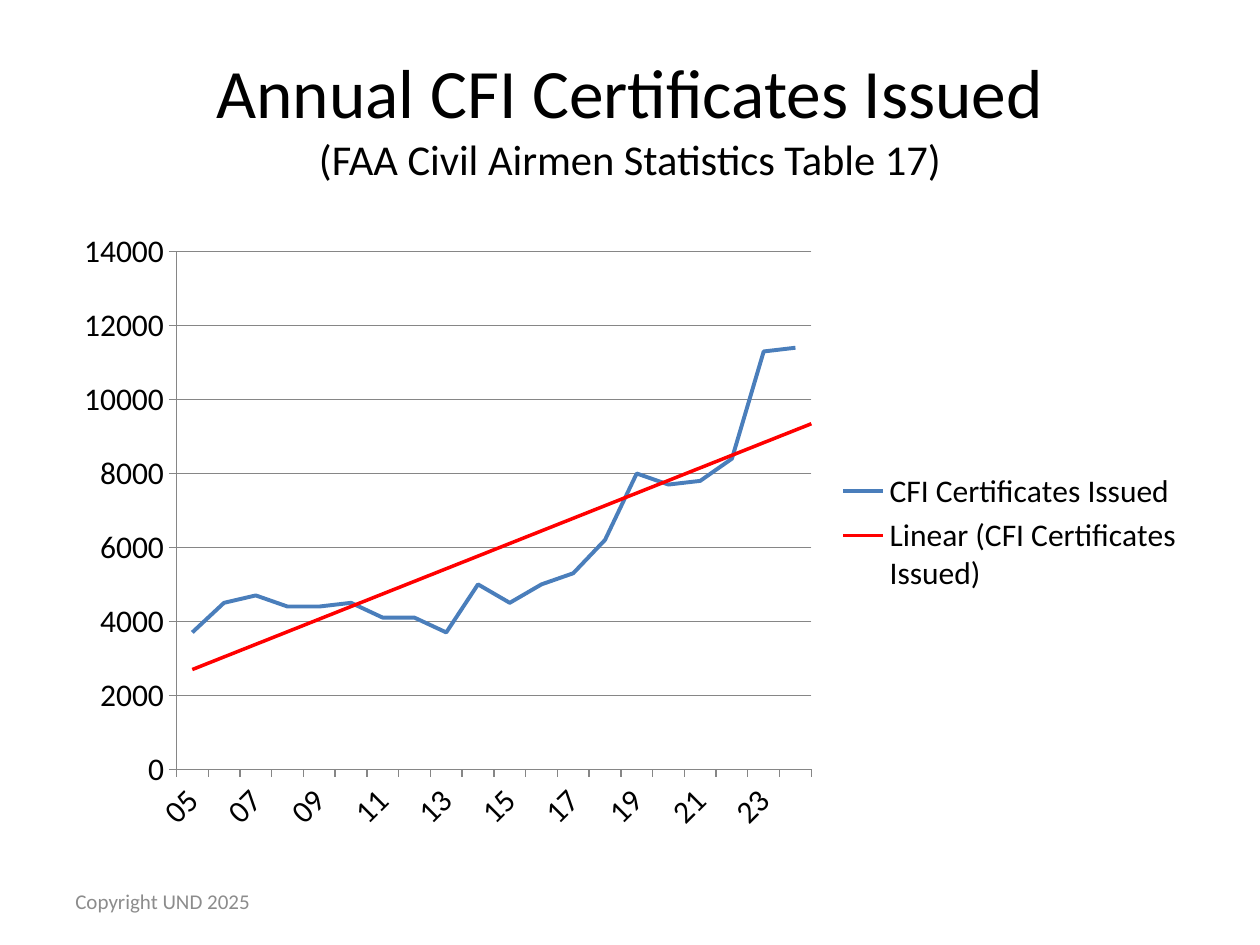
from lxml.etree import fromstring
from pptx import Presentation
from pptx.chart.data import CategoryChartData
from pptx.dml.color import RGBColor
from pptx.enum.chart import XL_CHART_TYPE, XL_LEGEND_POSITION, XL_MARKER_STYLE, XL_TICK_MARK
from pptx.enum.text import MSO_ANCHOR, PP_ALIGN
from pptx.oxml.ns import nsdecls, qn
from pptx.util import Inches, Pt

BLACK = RGBColor(0x00, 0x00, 0x00)
GRAY = RGBColor(0x8C, 0x8C, 0x8C)
AXIS_GRAY = RGBColor(0x86, 0x86, 0x86)
BLUE = RGBColor(0x4A, 0x7E, 0xBB)
RED = RGBColor(0xFF, 0x00, 0x00)

YEARS = [f"{year:02d}" for year in range(5, 25)]
CERTIFICATES = [3700, 4500, 4700, 4400, 4400, 4500, 4100, 4100, 3700, 5000,
                4500, 5000, 5300, 6200, 8000, 7700, 7800, 8400, 11300, 11400]

TREND = f"""<c:trendline {nsdecls('c', 'a')}>
  <c:spPr><a:ln w="{Pt(2)}"><a:solidFill><a:srgbClr val="{RED}"/></a:solidFill></a:ln></c:spPr>
  <c:trendlineType val="linear"/><c:forward val="0.5"/>
  <c:dispRSqr val="0"/><c:dispEq val="0"/>
</c:trendline>"""
PLOT_LAYOUT = f"""<c:layout {nsdecls('c')}><c:manualLayout>
  <c:layoutTarget val="inner"/><c:xMode val="edge"/><c:yMode val="edge"/>
  <c:x val="0.1"/><c:y val="0.05"/><c:w val="0.56"/><c:h val="0.83"/>
</c:manualLayout></c:layout>"""
LABEL_SKIP = f'<c:tickLblSkip {nsdecls("c")} val="2"/>'


class SlideBuilder:
    """Holds the style and the current slide and adds each kind of element."""

    font = "Calibri"

    def __init__(self, slide):
        self.slide = slide

    def style_run(self, run, size, color):
        run.font.name = self.font
        run.font.size = Pt(size)
        run.font.color.rgb = color

    def title(self, heading, source, left, top, width, height):
        title = self.slide.shapes.title
        title.left, title.top = Inches(left), Inches(top)
        title.width, title.height = Inches(width), Inches(height)
        frame = title.text_frame
        frame.text = f"{heading}\v{source}"
        frame.vertical_anchor = MSO_ANCHOR.MIDDLE
        frame.paragraphs[0].alignment = PP_ALIGN.CENTER
        for run, size in zip(frame.paragraphs[0].runs, (39.6, 24.3)):
            self.style_run(run, size, BLACK)

    def footer(self, wording, left, top, width, height):
        frame = self.slide.shapes.add_textbox(
            Inches(left), Inches(top), Inches(width), Inches(height)).text_frame
        frame.word_wrap = True
        frame.vertical_anchor = MSO_ANCHOR.MIDDLE
        frame.text = wording
        self.style_run(frame.paragraphs[0].runs[0], 12, GRAY)

    def trend_chart(self, name, categories, values, left, top, width, height):
        data = CategoryChartData()
        data.categories = categories
        data.add_series(name, values)
        chart = self.slide.shapes.add_chart(
            XL_CHART_TYPE.LINE, Inches(left), Inches(top),
            Inches(width), Inches(height), data).chart
        chart.has_title = False
        chart.font.name = self.font
        chart.font.size = Pt(18)
        chart.font.color.rgb = BLACK
        chart.has_legend = True
        chart.legend.position = XL_LEGEND_POSITION.RIGHT
        chart.legend.include_in_layout = False
        self.axes(chart)

        plot = chart.plots[0]
        plot.vary_by_categories = False
        series = plot.series[0]
        series.smooth = False
        series.marker.style = XL_MARKER_STYLE.NONE
        series.format.line.color.rgb = BLUE
        series.format.line.width = Pt(2.25)
        series._element.find(qn("c:cat")).addprevious(fromstring(TREND))

        plot_area = chart._chartSpace.chart.plotArea
        for layout in plot_area.findall(qn("c:layout")):
            plot_area.remove(layout)
        plot_area.insert(0, fromstring(PLOT_LAYOUT))

    def axes(self, chart):
        years, counts = chart.category_axis, chart.value_axis
        for axis in (years, counts):
            axis.major_tick_mark = XL_TICK_MARK.OUTSIDE
            axis.minor_tick_mark = XL_TICK_MARK.NONE
            axis.format.line.color.rgb = AXIS_GRAY
            axis.format.line.width = Pt(0.75)
            axis.tick_labels.font.size = Pt(18)
        counts.minimum_scale, counts.maximum_scale = 0, 14000
        counts.major_unit = 2000
        counts.has_major_gridlines = True
        counts.major_gridlines.format.line.color.rgb = AXIS_GRAY
        counts.major_gridlines.format.line.width = Pt(0.75)
        years.has_major_gridlines = False
        years._element.find(qn("c:txPr")).find(qn("a:bodyPr")).set("rot", "-2700000")
        years._element.find(qn("c:noMultiLvlLbl")).addprevious(fromstring(LABEL_SKIP))


def main():
    presentation = Presentation()
    presentation.slide_width, presentation.slide_height = Inches(10), Inches(7.5)
    builder = SlideBuilder(presentation.slides.add_slide(presentation.slide_layouts[5]))
    builder.title("Annual CFI Certificates Issued",
                  "(FAA Civil Airmen Statistics Table 17)", 0.5, 0.3, 9, 1.25)
    builder.footer("Copyright UND 2025", 0.5, 6.95, 2.33, 0.4)
    builder.trend_chart("CFI Certificates Issued", YEARS, CERTIFICATES, 0.5, 1.75, 9, 4.95)
    presentation.save("out.pptx")


if __name__ == "__main__":
    main()
